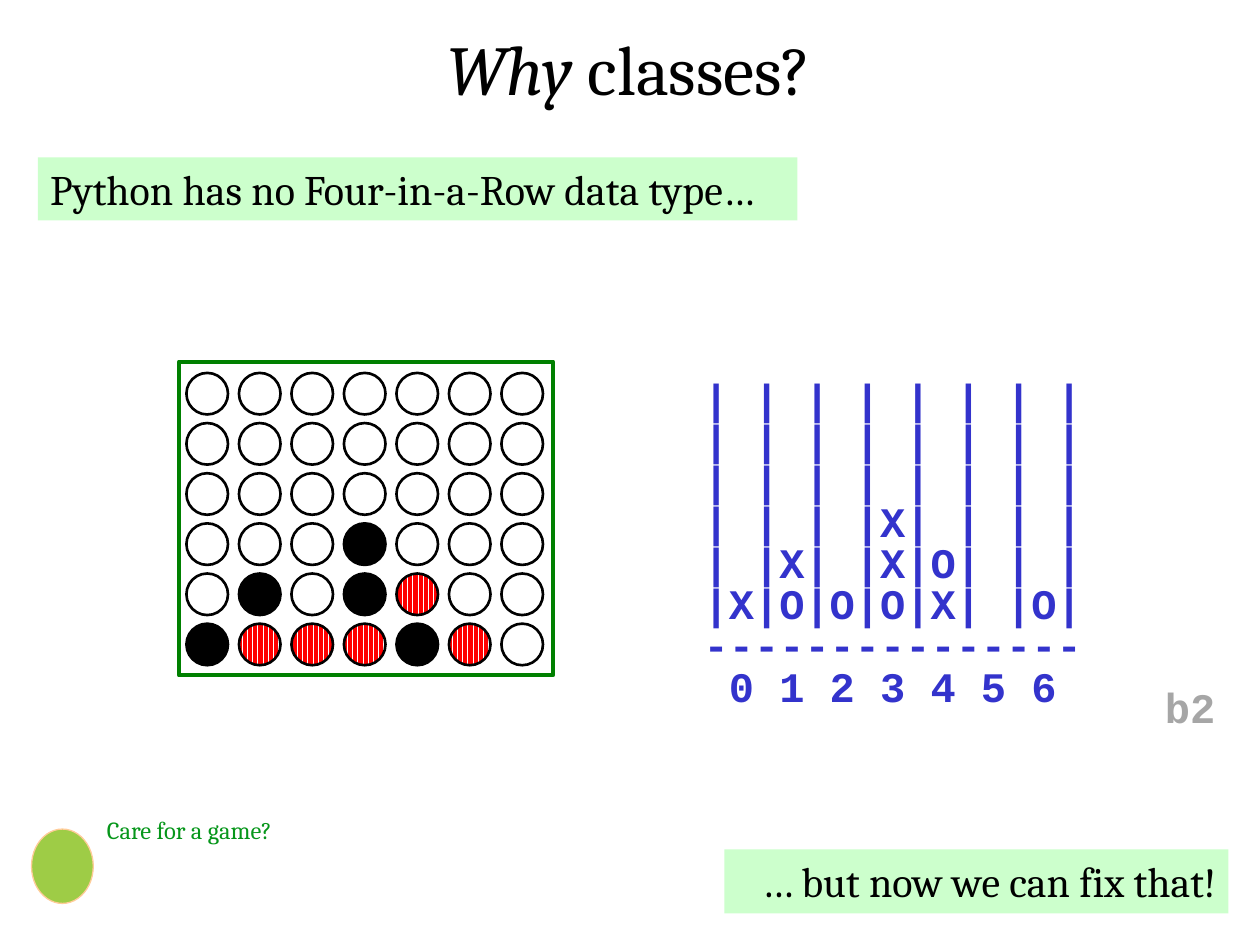
from dataclasses import dataclass

from lxml.etree import SubElement
from pptx import Presentation
from pptx.dml.color import RGBColor
from pptx.enum.dml import MSO_PATTERN
from pptx.enum.shapes import MSO_SHAPE
from pptx.enum.text import MSO_ANCHOR, PP_ALIGN
from pptx.oxml.ns import qn
from pptx.util import Inches, Pt


@dataclass(frozen=True)
class Theme:
    serif: str = "Cambria"
    mono: str = "Courier New"
    ink: str = "000000"
    paper: str = "FFFFFF"
    banner: str = "CCFFCC"
    frame: str = "008000"
    red: str = "FF0000"
    board_text: str = "3333CC"
    question: str = "06961A"
    tag: str = "A6A6A6"
    mascot: str = "9ECC46"
    mascot_edge: str = "FFCC99"
    title_size: int = 40
    body_size: int = 24
    small_size: int = 14


THEME = Theme()
TITLE = [("Why ", True), ("classes?", False)]
BANNERS = [
    ("Python has no Four-in-a-Row data type…", (0.3, 1.25, 6.03, 0.5), PP_ALIGN.LEFT),
    ("… but now we can fix that!", (5.75, 6.74, 4, 0.51), PP_ALIGN.RIGHT),
]
DISCS = [
    ".......",
    ".......",
    ".......",
    "...X...",
    ".X.XO..",
    "XOOOXO.",
]
PRINTED_CELLS = [
    "       ",
    "       ",
    "       ",
    "   X   ",
    " X XO  ",
    "XOOOX O",
]
PRINTED_BOARD = [f"|{'|'.join(row)}|" for row in PRINTED_CELLS]
PRINTED_BOARD += ["-" * 15, " ".join(str(col) for col in range(7))]

FRAME_BOX = (1.42, 2.87, 2.97, 2.49)
DISC_LEFT, DISC_TOP, DISC_SIZE = 1.48, 2.96, 0.33
COL_STEP, ROW_STEP = 2.5 / 6, 1.99 / 5


def rgb(value):
    return RGBColor.from_string(value)


def add_shape(s, kind, box, fill=None, line=None, width=1.5):
    sp = s.shapes.add_shape(kind, *map(Inches, box))
    sp.shadow.inherit = False
    if fill:
        sp.fill.solid()
        sp.fill.fore_color.rgb = rgb(fill)
    else:
        sp.fill.background()
    if line:
        sp.line.color.rgb = rgb(line)
        sp.line.width = Pt(width)
    else:
        sp.line.fill.background()
    return sp


def format_paragraph(p, font, size, color, align, bold=False, percent_before=50):
    p.alignment = align
    p.font.name = font
    p.font.size = Pt(size)
    p.font.bold = bold
    p.font.color.rgb = rgb(color)
    p.space_before = Pt(0)
    if percent_before:
        before = p._p.pPr.find(qn("a:spcBef"))
        before.remove(before[0])
        SubElement(before, qn("a:spcPct")).set("val", str(percent_before * 1000))


def write_lines(sp, lines, font, size, color, align=PP_ALIGN.LEFT, bold=False,
                spacing=None, wrap=True, percent_before=50):
    tf = sp.text_frame
    tf.word_wrap = wrap
    tf.vertical_anchor = MSO_ANCHOR.TOP
    for i, text in enumerate(lines):
        p = tf.paragraphs[0] if i == 0 else tf.add_paragraph()
        p.add_run().text = text
        if spacing:
            p.line_spacing = spacing
        format_paragraph(p, font, size, color, align, bold, percent_before)


def add_text(s, box, lines, *style, **options):
    sp = s.shapes.add_textbox(*map(Inches, box))
    write_lines(sp, lines, *style, **options)


def add_title(s):
    sp = s.shapes.title
    sp.left, sp.top, sp.width, sp.height = map(Inches, (0.83, 0.15, 8.33, 0.77))
    tf = sp.text_frame
    tf.vertical_anchor = MSO_ANCHOR.TOP
    p = tf.paragraphs[0]
    for text, italic in TITLE:
        r = p.add_run()
        r.text = text
        r.font.italic = italic
    format_paragraph(p, THEME.serif, THEME.title_size, THEME.ink, PP_ALIGN.CENTER)


def add_board(s):
    for row, cells in enumerate(DISCS):
        for col, cell in enumerate(cells):
            box = (DISC_LEFT + col * COL_STEP, DISC_TOP + row * ROW_STEP,
                   DISC_SIZE, DISC_SIZE)
            fill = THEME.ink if cell == "X" else THEME.paper
            sp = add_shape(s, MSO_SHAPE.OVAL, box, fill, THEME.ink)
            if cell == "O":
                sp.fill.patterned()
                sp.fill.pattern = MSO_PATTERN.DARK_VERTICAL
                sp.fill.fore_color.rgb = rgb(THEME.red)
                sp.fill.back_color.rgb = rgb(THEME.paper)
    add_shape(s, MSO_SHAPE.RECTANGLE, FRAME_BOX, line=THEME.frame, width=2.25)


def main():
    prs = Presentation()
    prs.slide_width, prs.slide_height = Inches(10), Inches(7.5)
    s = prs.slides.add_slide(prs.slide_layouts[5])
    add_title(s)
    for text, box, align in BANNERS:
        sp = add_shape(s, MSO_SHAPE.RECTANGLE, box, THEME.banner)
        write_lines(sp, [text], THEME.serif, THEME.body_size, THEME.ink, align)
    add_text(s, (5.42, 3.11, 3.33, 2.81), PRINTED_BOARD, THEME.mono, THEME.body_size,
             THEME.board_text, PP_ALIGN.CENTER, bold=True, spacing=0.4)
    add_shape(s, MSO_SHAPE.OVAL, (0.25, 6.58, 0.49, 0.59), THEME.mascot,
              THEME.mascot_edge, 0.75)
    add_text(s, (0.75, 6.42, 1.83, 0.34), ["Care for a game?"], THEME.serif,
             THEME.small_size, THEME.question)
    add_board(s)
    add_text(s, (9.14, 5.36, 0.61, 0.5), ["b2"], THEME.mono, THEME.body_size, THEME.tag,
             PP_ALIGN.CENTER, bold=True, wrap=False, percent_before=0)
    prs.save("out.pptx")


if __name__ == "__main__":
    main()
